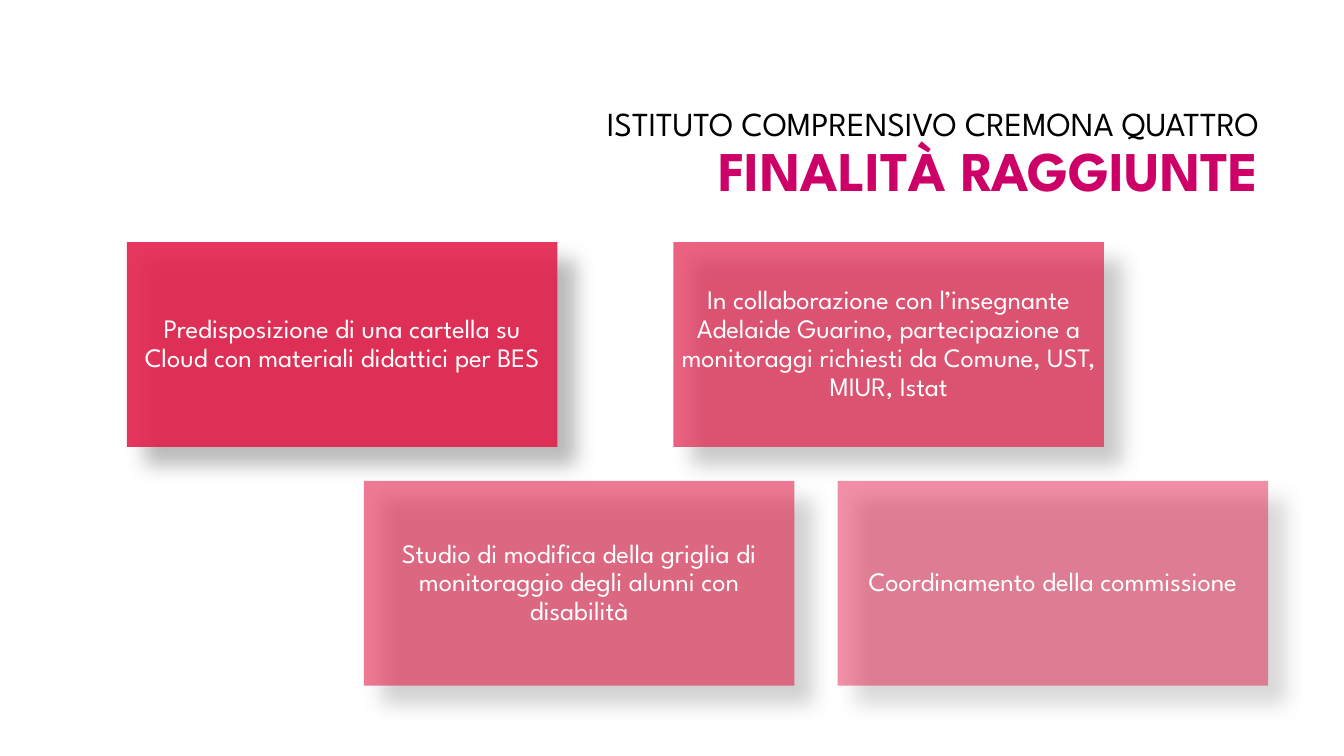
from lxml import etree
from pptx import Presentation
from pptx import util as u
from pptx.dml.color import RGBColor
from pptx.enum import shapes, text
from pptx.oxml import parse_xml
from pptx.oxml.ns import nsdecls, qn

RED = RGBColor(0xE3, 0x21, 0x4D)
PINK = RGBColor(0xCC, 0x00, 0x66)
BLACK = RGBColor(0, 0, 0)
WHITE = RGBColor(255, 255, 255)

WIDE, HIGH = 10.85, 5.16
TOP, LOW = 6.1, 12.12
CARDS = [
    (3.2, TOP, 90, "Predisposizione di una cartella su Cloud con materiali didattici per BES"),
    (16.97, TOP, 70, "In collaborazione con l’insegnante Adelaide Guarino, partecipazione a "
                     "monitoraggi richiesti da Comune, UST, MIUR, Istat"),
    (9.17, LOW, 60, "Studio di modifica della griglia di monitoraggio degli alunni con disabilità"),
    (21.11, LOW, 50, "Coordinamento della commissione"),
]


class Deck:
    font = "League Spartan"

    def __init__(self):
        self.prs = Presentation()
        self.prs.slide_width = u.Cm(33.87)
        self.prs.slide_height = u.Cm(19.05)
        self.slide = self.prs.slides.add_slide(self.prs.slide_layouts[6])

    def label(self, box, runs, align, pads):
        shape = self.slide.shapes.add_textbox(*map(u.Cm, box))
        frame = shape.text_frame
        style = {"word_wrap": True, "auto_size": text.MSO_AUTO_SIZE.NONE,
                 "vertical_anchor": text.MSO_ANCHOR.MIDDLE}
        for side, pad in zip(("left", "right", "top", "bottom"), pads):
            style["margin_" + side] = u.Cm(pad)
        for key, val in style.items():
            setattr(frame, key, val)
        para = frame.paragraphs[0]
        para.alignment = align
        para.line_spacing = 0.9
        for num, (words, size, color, bold) in enumerate(runs):
            if num:
                para.add_line_break()
            run = para.add_run()
            run.text = words
            form = {"name": self.font, "size": u.Pt(size), "bold": bold}
            for key, val in form.items():
                setattr(run.font, key, val)
            run.font.color.rgb = color

    def panel(self, box, alpha):
        shape = self.slide.shapes.add_shape(shapes.MSO_SHAPE.RECTANGLE, *map(u.Cm, box))
        shape.fill.solid()
        shape.fill.fore_color.rgb = RED
        shape.line.fill.background()
        props = shape._element.spPr
        tint = props.find(qn("a:solidFill")).find(qn("a:srgbClr"))
        etree.SubElement(tint, qn("a:alpha"), val=str(alpha * 1000))
        props.append(parse_xml(
            f'<a:effectLst {nsdecls("a")}><a:outerShdw blurRad="{u.Pt(15)}" '
            f'dist="{u.Pt(18)}" dir="2700000" algn="tl" rotWithShape="0">'
            '<a:srgbClr val="000000"><a:alpha val="30000"/></a:srgbClr>'
            '</a:outerShdw></a:effectLst>'))

    def card(self, left, top, alpha, words):
        box = (left, top, WIDE, HIGH)
        self.panel(box, alpha)
        self.label(box, [(words, 19, WHITE, False)], text.PP_ALIGN.CENTER, [0.2] * 4)

    def title(self, runs):
        self.label((8.05, 2.13, 23.93, 3.58), runs, text.PP_ALIGN.RIGHT,
                   (0.25, 0.25, 0.13, 0.13))


def main():
    deck = Deck()
    deck.title([("ISTITUTO COMPRENSIVO CREMONA QUATTRO", 24, BLACK, False),
                ("FINALITÀ RAGGIUNTE", 40, PINK, True)])
    for card in CARDS:
        deck.card(*card)
    deck.prs.save("out.pptx")


if __name__ == "__main__":
    main()
